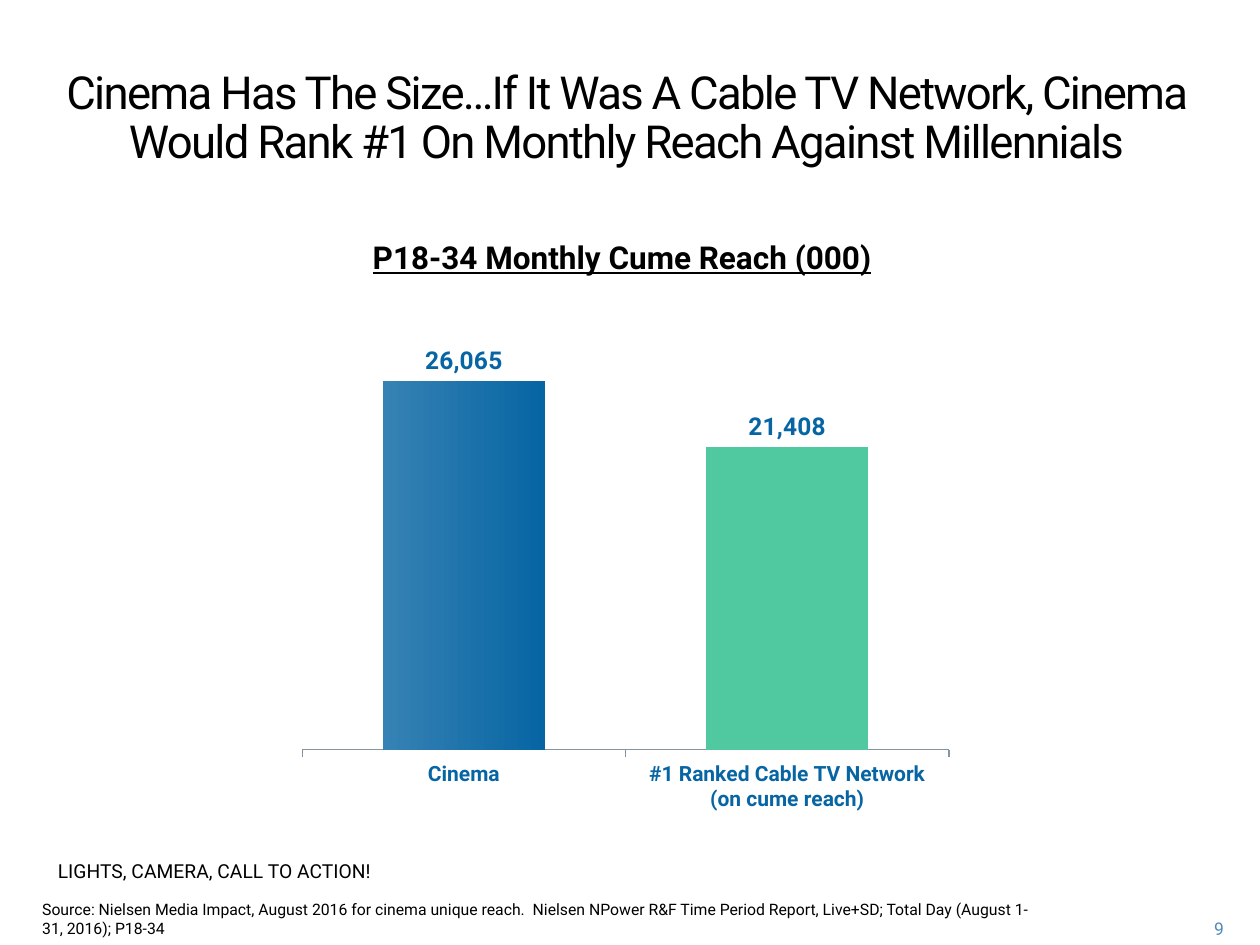
"""Build the slide comparing cinema's monthly reach with the top cable network."""
from lxml.etree import SubElement
from pptx import Presentation
from pptx.chart.data import CategoryChartData
from pptx.dml.color import RGBColor
from pptx.enum.chart import XL_CHART_TYPE, XL_LABEL_POSITION, XL_TICK_LABEL_POSITION, XL_TICK_MARK
from pptx.enum.text import MSO_ANCHOR, PP_ALIGN
from pptx.oxml.ns import qn
from pptx.util import Pt

FONT = "Roboto"
BLACK, BLUE, LIGHT_BLUE = "000000", "0765A3", "3682B4"
GREEN, GREY, PALE_BLUE = "50C8A0", "8395A2", "508ABA"

TITLE = ("Cinema Has The Size…If It Was A Cable TV Network, Cinema "
         "Would Rank #1 On Monthly Reach Against Millennials")
SUBTITLE = "P18-34 Monthly Cume Reach (000)"
TAGLINE = "LIGHTS, CAMERA, CALL TO ACTION!"
SOURCE = ("Source: Nielsen Media Impact, August 2016 for cinema unique reach.  "
          "Nielsen NPower R&F Time Period Report, Live+SD; Total Day "
          "(August 1-31, 2016); P18-34")
PAGE = "9"
REACH = {"Cinema": 26065, "#1 Ranked Cable TV Network (on cume reach)": 21408}
PLOT = {"x": 0.02, "y": 0.02, "w": 0.96, "h": 0.84}


def rgb(color):
    return RGBColor.from_string(color)


def style(font, size, color, bold=False):
    font.name, font.size, font.bold = FONT, Pt(size), bold
    font.color.rgb = rgb(color)


def fill_text(s, text, size, color=BLACK, align=PP_ALIGN.LEFT, anchor=MSO_ANCHOR.TOP, bold=False):
    tf = s.text_frame
    tf.text = text
    tf.word_wrap = True
    tf.vertical_anchor = anchor
    p = tf.paragraphs[0]
    p.alignment = align
    p.space_before = Pt(0)
    style(p.font, size, color, bold)
    return p


def add_title(slide):
    s = slide.shapes.title
    s.left, s.top, s.width, s.height = Pt(13), Pt(36), Pt(690), Pt(101)
    p = fill_text(s, TITLE, 26, align=PP_ALIGN.CENTER)
    p.line_spacing = Pt(28)
    p.runs[0].font._element.set("spc", "-100")


def add_text(slide, box, text, size, **options):
    s = slide.shapes.add_textbox(*map(Pt, box))
    return fill_text(s, text, size, **options)


def add_reach_chart(slide):
    data = CategoryChartData(number_format="#,##0")
    data.categories = list(REACH)
    data.add_series("Series 1", list(REACH.values()))
    chart = slide.shapes.add_chart(XL_CHART_TYPE.COLUMN_CLUSTERED, Pt(165), Pt(180),
                                   Pt(385), Pt(289), data).chart
    chart.has_title = chart.has_legend = False
    style(chart.font, 18, BLACK)

    axis = chart.category_axis
    axis.major_tick_mark = XL_TICK_MARK.OUTSIDE
    axis.format.line.color.rgb = rgb(GREY)
    axis.format.line.width = Pt(0.75)
    style(axis.tick_labels.font, 12, BLUE, True)
    axis = chart.value_axis
    axis.minimum_scale, axis.maximum_scale = 0, 30000
    axis.has_major_gridlines = axis.visible = False
    axis.tick_label_position = XL_TICK_LABEL_POSITION.NONE

    plot = chart.plots[0]
    plot.gap_width, plot.overlap, plot.vary_by_categories = 100, -20, False
    series = plot.series[0]
    fill = series.format.fill
    fill.gradient()
    fill.gradient_angle = 0
    for stop, position, color in zip(fill.gradient_stops, (0, 1), (LIGHT_BLUE, BLUE)):
        stop.position = position
        stop.color.rgb = rgb(color)
    fill = series.points[1].format.fill
    fill.solid()
    fill.fore_color.rgb = rgb(GREEN)

    labels = series.data_labels
    labels.show_value = True
    labels.number_format, labels.number_format_is_linked = "#,##0", False
    labels.position = XL_LABEL_POSITION.OUTSIDE_END
    style(labels.font, 14, BLUE, True)
    set_plot_area(chart)


def set_plot_area(chart):
    area = chart._chartSpace.chart.plotArea
    layout = area.find(qn("c:layout"))
    if layout is None:
        layout = SubElement(area, qn("c:layout"))
        area.insert(0, layout)
    manual = SubElement(layout, qn("c:manualLayout"))
    settings = {"layoutTarget": "inner", "xMode": "edge", "yMode": "edge", **PLOT}
    for tag, value in settings.items():
        SubElement(manual, qn(f"c:{tag}")).set("val", str(value))


def main():
    prs = Presentation()
    prs.slide_width, prs.slide_height = Pt(720), Pt(540)
    slide = prs.slides.add_slide(prs.slide_layouts[5])
    add_title(slide)
    p = add_text(slide, (9, 132.5, 693, 29), SUBTITLE, 18, bold=True,
                 align=PP_ALIGN.CENTER, anchor=MSO_ANCHOR.MIDDLE)
    p.font.underline = True
    add_reach_chart(slide)
    add_text(slide, (26, 487.5, 222, 34), TAGLINE, 11)
    add_text(slide, (17, 510.5, 588, 19), SOURCE, 9)
    add_text(slide, (662.5, 521.5, 44, 18), PAGE, 10, color=PALE_BLUE,
             align=PP_ALIGN.RIGHT, anchor=MSO_ANCHOR.MIDDLE)
    prs.save("out.pptx")


if __name__ == "__main__":
    main()
